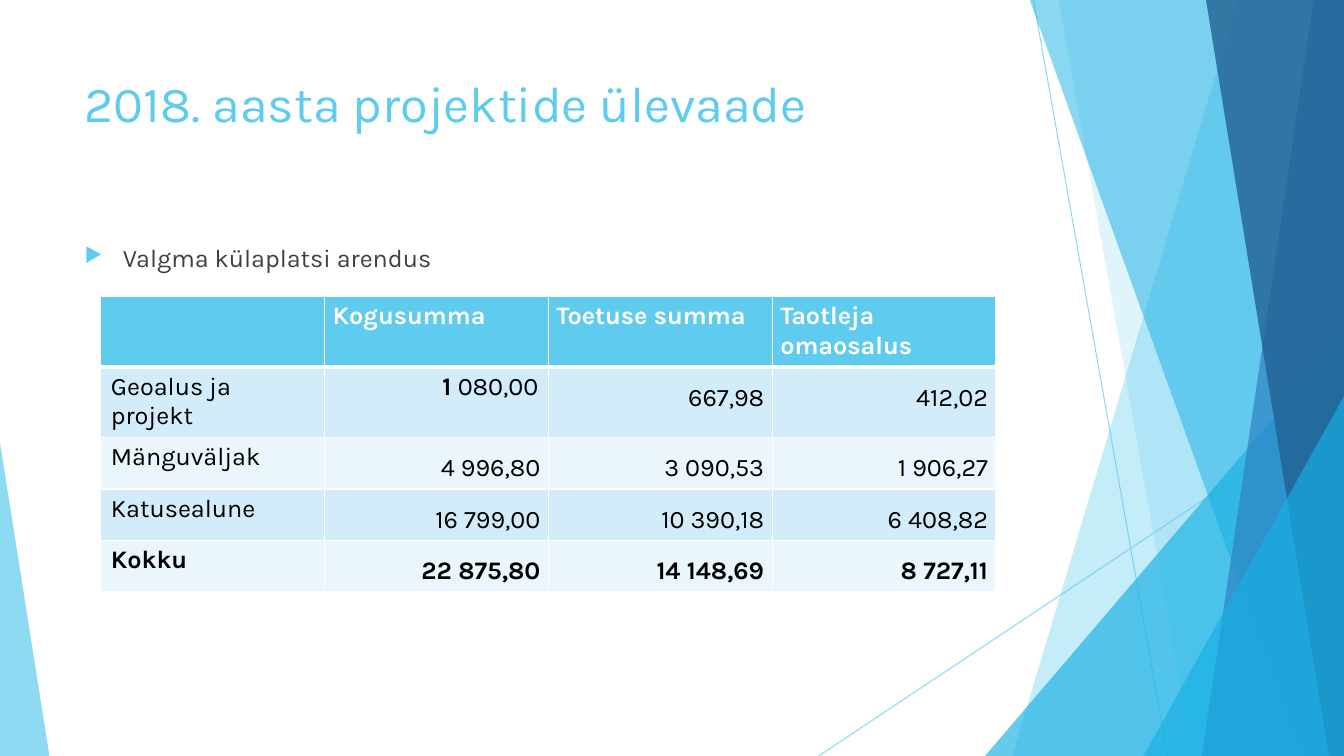
from dataclasses import dataclass

from lxml import etree
from pptx import Presentation
from pptx import util as u
from pptx.dml.color import RGBColor
from pptx.enum import shapes, text
from pptx.oxml import ns

PX = 9144  # EMU per px, 100 px to the inch
WIDTH, HEIGHT = 1333, 750
FONT = "Karla"
SKY, CYAN, BLUE, NAVY = "5FCBEF", "17B0E4", "2E83C3", "226292"
WHITE, BLACK, GREY = "FFFFFF", "000000", "404040"
BANDS = ("D2ECF9", "EAF6FC")


@dataclass
class Ray:
    """Thin straight line."""
    start: tuple[int, int]
    end: tuple[int, int]


@dataclass
class Blade:
    """Area from a slanted left edge to the right side of the slide."""
    top_x: int
    bottom_x: int
    colour: str
    opacity: int


@dataclass
class Wedge:
    """Triangle standing on the bottom of the slide."""
    left: int
    top: int
    width: int
    apex: int
    colour: str
    opacity: int


@dataclass
class Entry:
    """Table cell; lead is bold text in front of the rest."""
    words: str
    inset_top: int = 16
    lead: str = ""


DECOR = [
    Ray((1025, 0), (1158, HEIGHT)),
    Ray((WIDTH, 403), (812, HEIGHT)),
    Blade(1228, 1004, SKY, 36),
    Blade(1050, 1183, SKY, 20),
    Wedge(977, 333, 356, 1, CYAN, 66),
    Blade(1021, 1291, CYAN, 50),
    Blade(1303, 1192, BLUE, 70),
    Blade(1196, 1318, NAVY, 80),
    Wedge(1134, 393, 199, 1, CYAN, 66),
    Wedge(0, 439, 49, 0, SKY, 70),
]
HEADERS = ["", "Kogusumma", "Toetuse summa", "Taotleja omaosalus"]
PROJECTS = [
    ("Geoalus ja projekt", Entry("080,00", 5, "1 "), Entry("667,98"), Entry("412,02")),
    ("Mänguväljak", Entry("4 996,80"), Entry("3 090,53"), Entry("1 906,27")),
    ("Katusealune", Entry("16 799,00"), Entry("10 390,18"), Entry("6 408,82")),
    ("Kokku", Entry("22 875,80"), Entry("14 148,69"), Entry("8 727,11")),
]


def rgb(colour: str) -> RGBColor:
    return RGBColor.from_string(colour)


def set_opacity(shape, percent: int) -> None:
    for colour in shape.element.spPr.xpath(".//a:srgbClr"):
        etree.SubElement(colour, ns.qn("a:alpha"), val=str(percent * 1000))


def set_font(paragraph, size: int, colour: str, bold: bool = False) -> None:
    font = paragraph.font
    font.name, font.size, font.bold = FONT, u.Pt(size), bold
    font.color.rgb = rgb(colour)


def paint(shape, colour: str, opacity: int) -> None:
    shape.shadow.inherit = False
    shape.fill.solid()
    shape.fill.fore_color.rgb = rgb(colour)
    shape.line.fill.background()
    set_opacity(shape, opacity)


def draw_ray(slide, ray: Ray) -> None:
    ends = [value * PX for value in (*ray.start, *ray.end)]
    line = slide.shapes.add_connector(shapes.MSO_CONNECTOR.STRAIGHT, *ends)
    line.line.width = u.Pt(0.75)
    line.line.color.rgb = rgb(SKY)
    set_opacity(line, 70)
    etree.SubElement(line.element.spPr, ns.qn("a:effectLst"))


def draw_blade(slide, blade: Blade) -> None:
    builder = slide.shapes.build_freeform(blade.top_x, -1, scale=PX)
    builder.add_line_segments([(WIDTH, -1), (WIDTH, HEIGHT), (blade.bottom_x, HEIGHT)])
    paint(builder.convert_to_shape(), blade.colour, blade.opacity)


def draw_wedge(slide, wedge: Wedge) -> None:
    shape = slide.shapes.add_shape(
        shapes.MSO_SHAPE.ISOSCELES_TRIANGLE, wedge.left * PX, wedge.top * PX,
        wedge.width * PX, (HEIGHT - wedge.top) * PX)
    shape.adjustments[0] = wedge.apex
    paint(shape, wedge.colour, wedge.opacity)


def draw_title(slide, words: str) -> None:
    title = slide.shapes.title
    title.left, title.top, title.width, title.height = (v * PX for v in (74, 67, 940, 144))
    frame = title.text_frame
    frame.text = words
    frame.vertical_anchor = text.MSO_ANCHOR.TOP
    frame.auto_size = text.MSO_AUTO_SIZE.NONE
    frame.paragraphs[0].alignment = text.PP_ALIGN.LEFT
    set_font(frame.paragraphs[0], 36, SKY)
    title.element.getparent().append(title.element)  # in front of the decor


def draw_bullet(slide, words: str) -> None:
    box = slide.shapes.add_textbox(*(v * PX for v in (74, 236, 940, 424)))
    box.text_frame.word_wrap = True
    paragraph = box.text_frame.paragraphs[0]
    paragraph.text = words
    properties = paragraph._p.get_or_add_pPr()
    properties.set("marL", str(38 * PX))
    properties.set("indent", str(-38 * PX))
    bullet_colour = etree.SubElement(properties, ns.qn("a:buClr"))
    etree.SubElement(bullet_colour, ns.qn("a:srgbClr"), val=SKY)
    etree.SubElement(properties, ns.qn("a:buSzPct"), val="80000")
    etree.SubElement(properties, ns.qn("a:buChar"), char="▶")
    set_font(paragraph, 18, GREY)


def style_cell(cell, colour: str, top: float = 1, bottom: float = 1) -> None:
    properties = cell._tc.get_or_add_tcPr()
    for side, width in (("L", 1), ("R", 1), ("T", top), ("B", bottom)):
        border = etree.SubElement(properties, ns.qn(f"a:ln{side}"), w=str(u.Pt(width)))
        fill = etree.SubElement(border, ns.qn("a:solidFill"))
        etree.SubElement(fill, ns.qn("a:srgbClr"), val=WHITE)
    cell.fill.solid()
    cell.fill.fore_color.rgb = rgb(colour)


def draw_table(slide) -> None:
    rows, columns = len(PROJECTS) + 1, len(HEADERS)
    table = slide.shapes.add_table(
        rows, columns, 100 * PX, 294 * PX, columns * 222 * PX, rows * 41 * PX).table

    # Header row
    for column, words in enumerate(HEADERS):
        cell = table.cell(0, column)
        cell.text = words
        cell.margin_left = cell.margin_right = 8 * PX
        style_cell(cell, SKY, bottom=3)
        set_font(cell.text_frame.paragraphs[0], 18, WHITE, bold=True)

    # Project rows, the last one being the total
    for row, (label, *amounts) in enumerate(PROJECTS, start=1):
        is_total = row == len(PROJECTS)
        for column, entry in enumerate([Entry(label, 5), *amounts]):
            cell = table.cell(row, column)
            paragraph = cell.text_frame.paragraphs[0]
            if entry.lead:
                lead = paragraph.add_run()
                lead.text, lead.font.bold = entry.lead, True
            paragraph.add_run().text = entry.words
            set_font(paragraph, 18, BLACK, bold=is_total)
            if column:
                paragraph.alignment = text.PP_ALIGN.RIGHT
            if entry.inset_top > 5:
                cell.margin_left = cell.margin_right = 8 * PX
                cell.margin_top = entry.inset_top * PX
            style_cell(cell, BANDS[(row - 1) % 2], top=3 if row == 1 else 1)


def main() -> None:
    presentation = Presentation()
    presentation.slide_width, presentation.slide_height = WIDTH * PX, HEIGHT * PX
    slide = presentation.slides.add_slide(presentation.slide_layouts.get_by_name("Title Only"))
    painters = {Ray: draw_ray, Blade: draw_blade, Wedge: draw_wedge}
    for part in DECOR:
        painters[type(part)](slide, part)
    draw_title(slide, "2018. aasta projektide ülevaade")
    draw_bullet(slide, "Valgma külaplatsi arendus")
    draw_table(slide)
    presentation.save("out.pptx")


if __name__ == "__main__":
    main()
